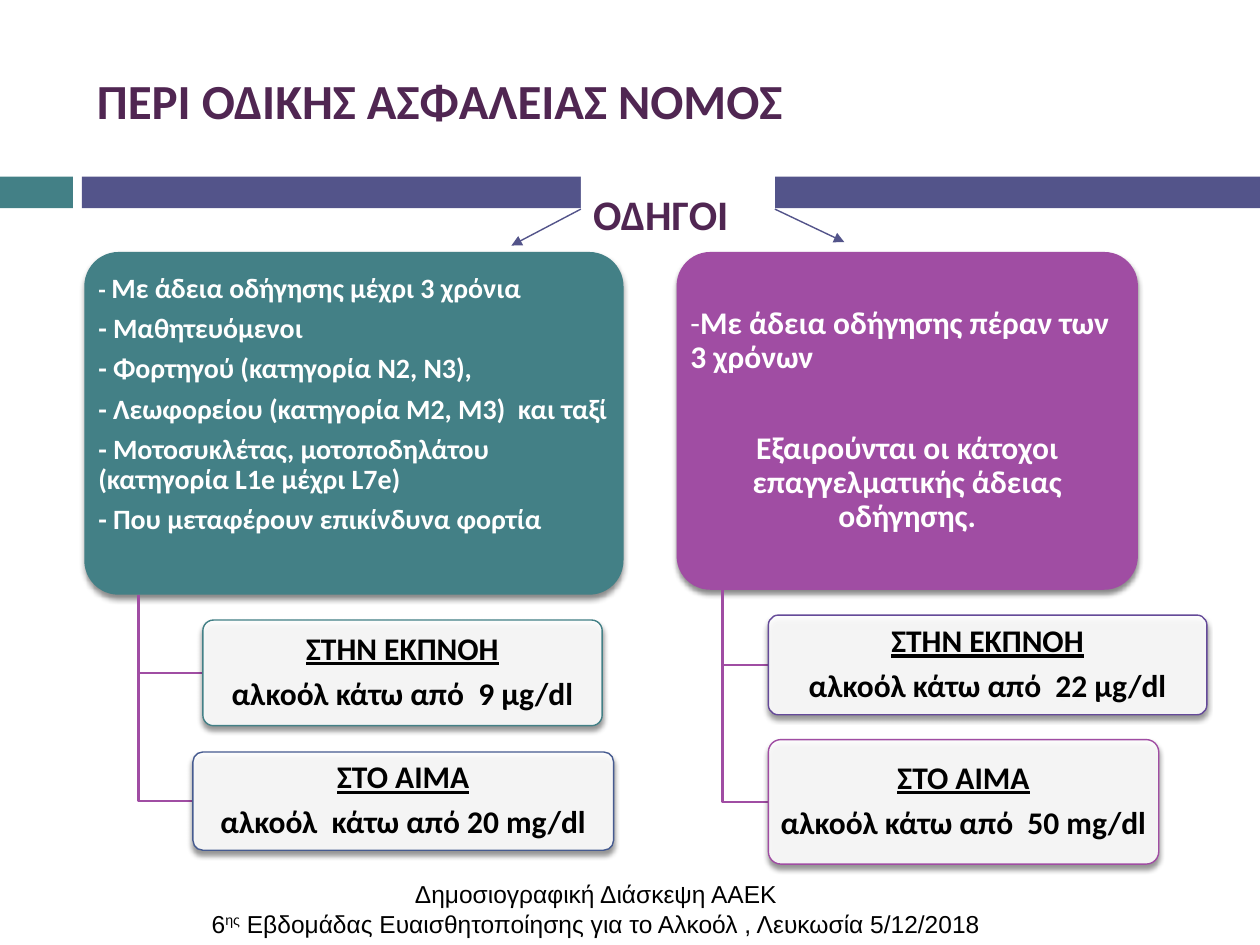
from lxml.etree import SubElement
from pptx import Presentation
from pptx.dml.color import RGBColor
from pptx.enum.shapes import MSO_CONNECTOR as Line, MSO_SHAPE as Preset
from pptx.enum.text import MSO_ANCHOR as Anchor, PP_ALIGN as Align
from pptx.oxml.ns import qn
from pptx.util import Cm, Pt

THEME = dict(
    teal="438086", indigo="53548A", purple="A04DA3", plum="502652",
    blue="465B90", violet="654A99", white="FFFFFF", black="000000",
    font="Calibri", footer_font="Arial",
    title=28, label=24, card=18, list=16, small=14, rule=0.79, branch=1.5,
)

# Content: a paragraph is a list of (text, format changes) spans
TITLE = "ΠΕΡΙ ΟΔΙΚΗΣ ΑΣΦΑΛΕΙΑΣ ΝΟΜΟΣ"
LABEL = "ΟΔΗΓΟΙ"
NEW_DRIVERS = [
    [("- ", dict(size=THEME["small"])), ("Με άδεια οδήγησης μέχρι 3 χρόνια", {})],
    [("- Μαθητευόμενοι", {})],
    [("- Φορτηγού (κατηγορία Ν2, Ν3),", {})],
    [("- Λεωφορείου (κατηγορία Μ2, Μ3)  και ταξί", {})],
    [("- Μοτοσυκλέτας, μοτοποδηλάτου (κατηγορία L1e μέχρι L7e)", {})],
    [("- Που μεταφέρουν επικίνδυνα φορτία", {})],
]
OTHER_DRIVERS = [
    [("-", dict(bold=False)), ("Με άδεια οδήγησης πέραν των 3 χρόνων", {})],
    [("Εξαιρούνται οι κάτοχοι επαγγελματικής άδειας οδήγησης.", {})],
]
FOOTER = [
    [("Δημοσιογραφική Διάσκεψη ΑΑΕΚ", {})],
    [("6", {}), ("ης", dict(raised=30)),
     (" Εβδομάδας Ευαισθητοποίησης για το Αλκοόλ\u00a0, Λευκωσία 5/12/2018", {})],
]
# Boxes are left, top, width, height in centimetres
GROUPS = [
    dict(box=(1.7, 5.08, 10.87, 6.91), fill="teal", text=NEW_DRIVERS, size=THEME["list"],
         after=5.7, bottom=0.82, cards=[
             ((4.09, 12.5, 8.05, 2.13), "teal", "ΣΤΗΝ ΕΚΠΝΟΗ", "αλκοόλ κάτω από  9 μg/dl"),
             ((3.89, 15.16, 8.48, 1.98), "blue", "ΣΤΟ ΑΙΜΑ", "αλκοόλ  κάτω από 20 mg/dl")]),
    dict(box=(13.64, 5.08, 9.3, 6.81), fill="purple", text=OTHER_DRIVERS, size=THEME["card"],
         after=6.3, bottom=0.08, cards=[
             ((15.49, 12.4, 8.84, 2.01), "violet", "ΣΤΗΝ ΕΚΠΝΟΗ", "αλκοόλ κάτω από  22 μg/dl"),
             ((15.49, 14.91, 7.87, 2.51), "purple", "ΣΤΟ ΑΙΜΑ", "αλκοόλ κάτω από  50 mg/dl")]),
]
BARS = [((0, 3.56, 1.47, 0.64), "teal"), ((1.65, 3.56, 23.75, 0.64), "indigo")]
LABEL_BOX = (11.71, 3.53, 3.91, 1.37)
ARROWS = [(1, (10.31, 4.95)), (3, (17.02, 4.88))]  # side of the label, arrow tip


def color(name):
    return RGBColor.from_string(THEME[name])


def place(box):
    return [Cm(value) for value in box]


def write(shape, paras, size, ink, font="font", bold=True, align=Align.LEFT,
          anchor=Anchor.MIDDLE, spacing=1.0, after=0, insets=None):
    frame = shape.text_frame
    frame.word_wrap = True
    frame.vertical_anchor = anchor
    if insets:
        (frame.margin_left, frame.margin_top,
         frame.margin_right, frame.margin_bottom) = place(insets)
    for index, spans in enumerate(paras):
        para = frame.paragraphs[0] if index == 0 else frame.add_paragraph()
        para.alignment = align
        para.line_spacing = spacing
        para.space_before, para.space_after = Pt(0), Pt(after)
        for text, change in spans:
            span = para.add_run()
            span.text = text
            span.font.name = THEME[font]
            span.font.size = Pt(change.get("size", size))
            span.font.bold = change.get("bold", bold)
            span.font.underline = change.get("underline", False)
            span.font.color.rgb = color(ink)
            if "raised" in change:
                span.font.size = Pt(size)
                span._r.get_or_add_rPr().set("baseline", str(change["raised"] * 1000))
    return frame


def add_box(page, box, fill, preset=Preset.RECTANGLE, line=None):
    shape = page.shapes.add_shape(preset, *place(box))
    shape.shadow.inherit = False
    shape.fill.solid()
    shape.fill.fore_color.rgb = color(fill)
    if line:
        shape.line.color.rgb = color(line)
        shape.line.width = Pt(THEME["rule"])
    else:
        shape.line.fill.background()
    return shape


def add_rounded(page, box, fill, line=None):
    shape = add_box(page, box, fill, Preset.ROUNDED_RECTANGLE, line)
    shape.adjustments[0] = 0.1
    effects = shape._element.spPr.find(qn("a:effectLst"))
    shadow = SubElement(effects, qn("a:outerShdw"), blurRad=str(Pt(3)),
                        dist=str(Pt(2.4)), dir="5400000", rotWithShape="0")
    shade = SubElement(shadow, qn("a:srgbClr"), val=THEME["black"])
    SubElement(shade, qn("a:alpha"), val="45000")
    return shape


def add_branch(page, head, card):
    left, top, width, height = head
    stem = left + width / 10
    middle = card[1] + card[3] / 2
    builder = page.shapes.build_freeform(Cm(stem), Cm(top + height))
    builder.add_line_segments([(Cm(stem), Cm(middle)), (Cm(card[0]), Cm(middle))], close=False)
    branch = builder.convert_to_shape()
    branch.shadow.inherit = False
    branch.fill.background()
    branch.line.color.rgb = color("purple")
    branch.line.width = Pt(THEME["branch"])


def add_group(page, group):
    head = add_rounded(page, group["box"], group["fill"])
    frame = write(head, group["text"], group["size"], "white", spacing=0.9,
                  after=group["after"], insets=(0.08, 0.08, 0.08, group["bottom"]))
    if group["text"] is OTHER_DRIVERS:
        frame.paragraphs[1].alignment = Align.CENTER
        frame.paragraphs[1].space_before = Pt(26)
    for box, line, heading, limit in group["cards"]:
        add_branch(page, group["box"], box)
        card = add_rounded(page, box, "white", line)
        solid = card._element.spPr.find(qn("a:solidFill"))
        SubElement(solid[0], qn("a:alpha"), val="90000")
        write(card, [[(heading, dict(underline=True))], [(limit, {})]], THEME["card"], "black",
              align=Align.CENTER, spacing=0.9, after=6.3, insets=(0.1, 0.08, 0.1, 0.08))


def add_arrow(page, label, side, tip):
    arrow = page.shapes.add_connector(Line.STRAIGHT, 0, 0, *place(tip))
    arrow.begin_connect(label, side)
    arrow.line.color.rgb = color("indigo")
    arrow.line.width = Pt(THEME["rule"])
    SubElement(arrow.line._get_or_add_ln(), qn("a:tailEnd"), type="triangle")
    SubElement(arrow._element.spPr, qn("a:effectLst"))


def main():
    deck = Presentation()
    deck.slide_width, deck.slide_height = Cm(25.4), Cm(19.05)
    page = deck.slides.add_slide(deck.slide_layouts[5])

    # Title and the two bars below it
    title = page.shapes.title
    title.left, title.top, title.width, title.height = place((1.7, 0.64, 22.66, 2.74))
    write(title, [[(TITLE, {})]], THEME["title"], "plum")
    for box, fill in BARS:
        add_box(page, box, fill)

    # Driver groups with their limits
    for group in GROUPS:
        add_group(page, group)

    # Label with arrows to both groups
    label = add_box(page, LABEL_BOX, "white")
    write(label, [[(LABEL, {})]], THEME["label"], "plum", anchor=Anchor.TOP, spacing=1.15)
    for side, tip in ARROWS:
        add_arrow(page, label, side, tip)

    # Footer
    footer = page.shapes.add_textbox(*place((2.21, 17.6, 19.61, 1.4)))
    write(footer, FOOTER, THEME["small"], "black", font="footer_font", bold=False,
          align=Align.CENTER, anchor=Anchor.TOP)

    deck.save("out.pptx")


if __name__ == "__main__":
    main()
